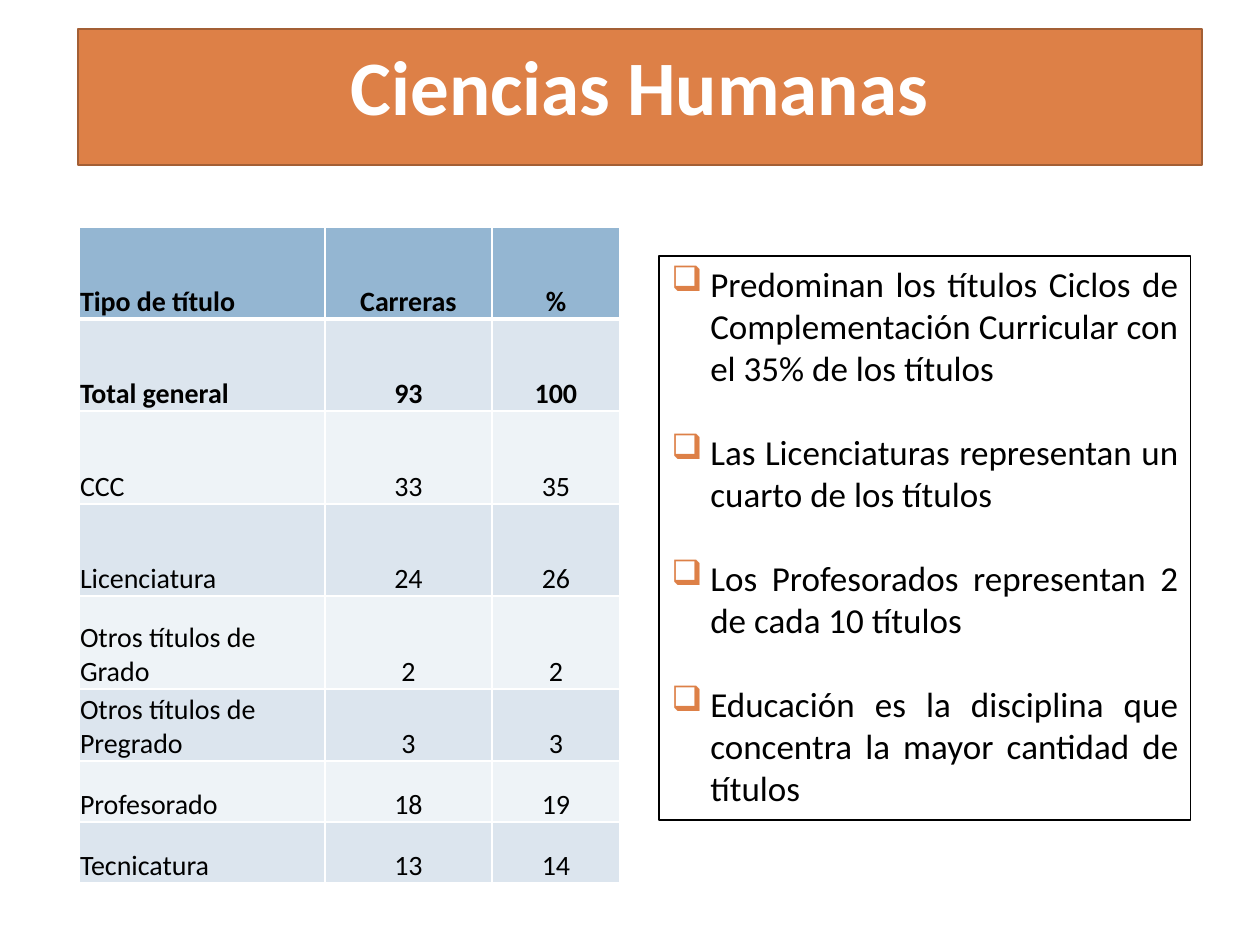
from pptx import Presentation
from pptx.dml.color import RGBColor
from pptx.enum.shapes import MSO_SHAPE
from pptx.enum.text import MSO_ANCHOR, PP_ALIGN
from pptx.util import Pt
from lxml.etree import SubElement
from pptx.oxml.ns import qn
from dataclasses import dataclass

PX = 914400 // 126


@dataclass(frozen=True)
class Theme:
    font: str = "Calibri"
    accent: str = "DD8047"
    accent_dark: str = "A35F35"
    header: str = "94B6D2"
    bands: tuple = ("DCE5EE", "EEF3F7")
    white: str = "FFFFFF"
    black: str = "000000"
    title_size: int = 44
    body_size: int = 20
    table_size: int = 16


T = Theme()


def add_run(p, text, size, color, bold=False):
    r = p.add_run()
    r.text = text
    r.font.name = T.font
    r.font.size = Pt(size)
    r.font.bold = bold
    r.font.color.rgb = RGBColor.from_string(color)


def add_border(cell, side, width):
    ln = SubElement(cell._tc.get_or_add_tcPr(), qn(f"a:ln{side}"), w=str(Pt(width)))
    fill = SubElement(ln, qn("a:solidFill"))
    SubElement(fill, qn("a:srgbClr"), val=T.white)


prs = Presentation()
prs.slide_width, prs.slide_height = 1260 * PX, 945 * PX
s = prs.slides.add_slide(prs.slide_layouts[6])

# Title banner
sp = s.shapes.add_shape(MSO_SHAPE.RECTANGLE, 78 * PX, 29 * PX, 1124 * PX, 136 * PX)
sp.shadow.inherit = False
sp.fill.solid()
sp.fill.fore_color.rgb = RGBColor.from_string(T.accent)
sp.line.color.rgb = RGBColor.from_string(T.accent_dark)
sp.line.width = Pt(1.5)
tf = sp.text_frame
tf.vertical_anchor = MSO_ANCHOR.TOP
tf.margin_top = 10 * PX
p = tf.paragraphs[0]
p.alignment = PP_ALIGN.CENTER
add_run(p, "Ciencias Humanas", T.title_size, T.white, bold=True)

# Table of degree types
rows = [
    ("Tipo de título", "Carreras", "%"),
    ("Total general", "93", "100"),
    ("CCC", "33", "35"),
    ("Licenciatura", "24", "26"),
    ("Otros títulos de Grado", "2", "2"),
    ("Otros títulos de Pregrado", "3", "3"),
    ("Profesorado", "18", "19"),
    ("Tecnicatura", "13", "14"),
]
col_widths = [246, 167, 128]
row_heights = [92, 92, 93, 92, 93, 72, 61, 61]
table = s.shapes.add_table(len(rows), len(col_widths), 79 * PX, 227 * PX,
                           sum(col_widths) * PX, sum(row_heights) * PX).table
for col, width in zip(table.columns, col_widths):
    col.width = width * PX
for row, height in zip(table.rows, row_heights):
    row.height = height * PX

for i, values in enumerate(rows):
    for j, value in enumerate(values):
        cell = table.cell(i, j)
        cell.margin_left = cell.margin_right = cell.margin_top = PX
        cell.margin_bottom = 0
        cell.vertical_anchor = MSO_ANCHOR.BOTTOM
        # The rule under the header row is thicker
        for side, width in (("L", 1), ("R", 1), ("T", 3 if i == 1 else 1), ("B", 3 if i == 0 else 1)):
            add_border(cell, side, width)
        cell.fill.solid()
        cell.fill.fore_color.rgb = RGBColor.from_string(T.header if i == 0 else T.bands[(i - 1) % 2])
        p = cell.text_frame.paragraphs[0]
        p.alignment = PP_ALIGN.LEFT if j == 0 else PP_ALIGN.CENTER
        add_run(p, value, T.table_size, T.black, bold=i < 2)

# Findings box
findings = [
    "Predominan los títulos Ciclos de Complementación Curricular con el 35% de los títulos",
    "Las Licenciaturas representan un cuarto de los títulos",
    "Los Profesorados representan 2 de cada 10 títulos",
    "Educación es la disciplina que concentra la mayor cantidad de títulos",
]
sp = s.shapes.add_textbox(659 * PX, 256 * PX, 532 * PX, 564 * PX)
sp.line.color.rgb = RGBColor.from_string(T.black)
sp.line.width = Pt(0.75)
tf = sp.text_frame
tf.word_wrap = True
for i, text in enumerate(findings):
    p = tf.add_paragraph() if i else tf.paragraphs[0]
    p.alignment = PP_ALIGN.JUSTIFY
    p.space_before = Pt(24 if i else 0)
    pPr = p._p.get_or_add_pPr()
    pPr.set("marL", str(39 * PX))
    pPr.set("indent", str(-39 * PX))
    color = SubElement(pPr, qn("a:buClr"))
    SubElement(color, qn("a:srgbClr"), val=T.accent)
    SubElement(pPr, qn("a:buChar"), char="❑")
    add_run(p, text, T.body_size, T.black)

prs.save("out.pptx")
